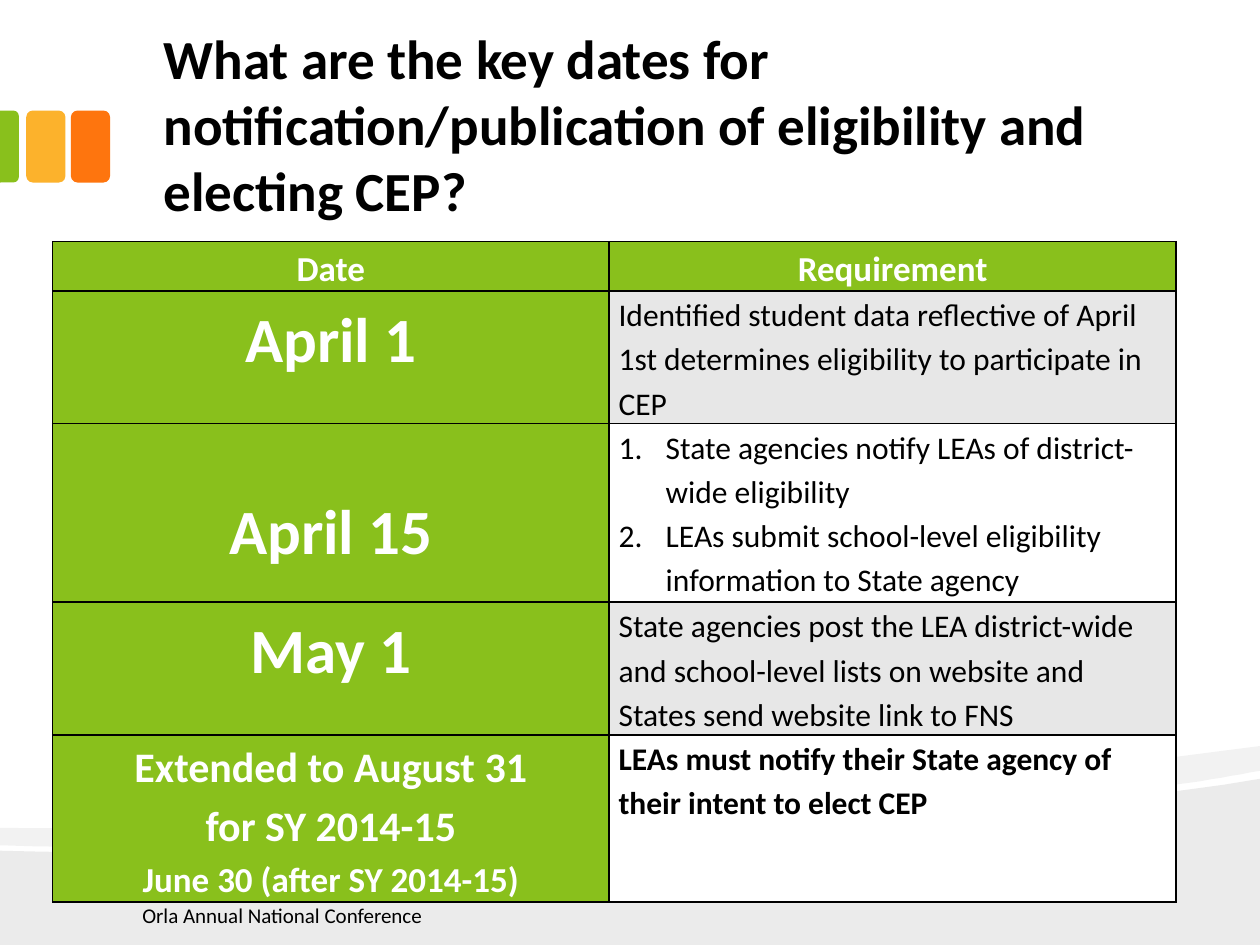
from lxml import etree
from pptx import Presentation
from pptx.dml.color import RGBColor
from pptx.enum import shapes as kinds, text as txt
from pptx.oxml import ns
from pptx.util import Cm, Pt

INK = {"black": "000000", "white": "FFFFFF", "green": "89C01C",
       "gold": "FCB22C", "orange": "FE750E", "grey": "E7E7E7"}
FONT = "Calibri"
LEFT, MID = txt.PP_ALIGN.LEFT, txt.PP_ALIGN.CENTER

# Each entry: date lines with sizes, requirement lines, requirement bold, top gap in cm
ROWS = [
    ([("April 1", 36)],
     ["Identified student data reflective of April 1st determines "
      "eligibility to participate in CEP"], False, 0),
    ([("April 15", 36)],
     ["State agencies notify LEAs of district-wide eligibility",
      "LEAs submit school-level eligibility information to State agency"],
     False, 1.2),
    ([("May 1", 36)],
     ["State agencies post the LEA district-wide and school-level lists "
      "on website and States send website link to FNS"], False, 0),
    ([("Extended to August 31", 24), ("for SY 2014-15", 24),
      ("June 30 (after SY 2014-15)", 20)],
     ["LEAs must notify their State agency of their intent to elect CEP"],
     True, 0),
]


def rgb(name):
    return RGBColor.from_string(INK[name])


def paint(shape, color):
    shape.shadow.inherit = False
    shape.fill.solid()
    shape.fill.fore_color.rgb = rgb(color)
    shape.line.fill.background()


def style(para, size, color, bold=False, align=LEFT):
    para.alignment = align
    for run in para.runs:
        font = run.font
        font.name, font.size, font.bold = FONT, Pt(size), bold
        font.color.rgb = rgb(color)


def pad(frame, anchor):
    frame.word_wrap = True
    frame.auto_size = txt.MSO_AUTO_SIZE.NONE
    frame.vertical_anchor = anchor
    frame.margin_left = frame.margin_right = Cm(0.33)
    frame.margin_top = frame.margin_bottom = Cm(0.18)


def curve(a, b, c, d, steps=24):
    """Points along a cubic curve, without its start."""
    pts = []
    for i in range(1, steps + 1):
        t = i / steps
        s = 1 - t
        pts.append(tuple(s**3 * p + 3 * s * s * t * q + 3 * s * t * t * r + t**3 * e
                         for p, q, r, e in zip(a, b, c, d)))
    return pts


def wave(slide, pts, alpha):
    """Closed outline through points in cm, black at alpha percent."""
    pts = [(x * 100, y * 100) for x, y in pts]
    pen = slide.shapes.build_freeform(*pts[0], scale=Cm(0.01))
    pen.add_line_segments(pts[1:], close=True)
    shape = pen.convert_to_shape()
    paint(shape, "black")
    tint = shape.fill._xPr.find(".//" + ns.qn("a:srgbClr"))
    etree.SubElement(tint, ns.qn("a:alpha"), val=str(alpha * 1000))


def waves(slide, wide, high):
    start, end = (0, 17.15), (wide, 15.7)
    wave(slide, [end, (wide, high), (0, high), start]
         + curve(start, (6.71, 17.35), (19.86, 16.64), end), 8)
    top, low, bend = (wide, 15.04), (wide, 15.54), (19.61, 16.28)
    wave(slide, [top, low]
         + curve(low, (23.93, 15.82), (21.89, 16.08), bend)
         + curve(bend, (13.28, 16.84), (4.9, 17.2), (0, 17.04))
         + [(0, 16.69)]
         + curve((0, 16.69), (12.42, 16.81), (18.49, 15.93), top), 5)


def tabs(slide, top, wide, high):
    for i, color in enumerate(("gold", "orange")):
        tab = slide.shapes.add_shape(
            kinds.MSO_SHAPE.ROUNDED_RECTANGLE,
            Cm(0.53 + i * 0.9), Cm(top), Cm(wide), Cm(high))
        paint(tab, color)
    thin = 0.38
    edge = slide.shapes.add_shape(
        kinds.MSO_SHAPE.ROUND_2_SAME_RECTANGLE, Cm((thin - high) / 2),
        Cm(top + (high - thin) / 2), Cm(high), Cm(thin))
    edge.rotation = 90
    edge.adjustments[0], edge.adjustments[1] = 0.29, 0
    paint(edge, "green")


def title(slide, x, y, w, h):
    head = slide.shapes.title
    head.left, head.top, head.width, head.height = map(Cm, (x, y, w, h))
    frame = head.text_frame
    frame.text = ("What are the key dates for notification/publication "
                  "of eligibility and electing CEP?")
    pad(frame, txt.MSO_ANCHOR.BOTTOM)
    style(frame.paragraphs[0], 31.5, "black", True)


def border(cell):
    props = cell._tc.get_or_add_tcPr()
    for i, side in enumerate(("lnL", "lnR", "lnT", "lnB")):
        line = etree.Element(ns.qn("a:" + side), w=str(Pt(1)))
        fill = etree.SubElement(line, ns.qn("a:solidFill"))
        etree.SubElement(fill, ns.qn("a:srgbClr"), val=INK["black"])
        props.insert(i, line)


def number(para):
    props = para._p.get_or_add_pPr()
    props.set("marL", str(Cm(0.95)))
    props.set("indent", str(-Cm(0.95)))
    etree.SubElement(props, ns.qn("a:buFont"), typeface="+mj-lt")
    etree.SubElement(props, ns.qn("a:buAutoNum"), type="arabicPeriod")


def write(cell, lines, fill, color, bold, align, gap=0):
    """Fill a cell with (text, size) lines."""
    cell.margin_left = cell.margin_right = Cm(0.19)
    cell.margin_top, cell.margin_bottom = Cm(gap), 0
    cell.fill.solid()
    cell.fill.fore_color.rgb = rgb(fill)
    border(cell)
    frame = cell.text_frame
    frame.text = "\n".join(line for line, _ in lines)
    for para, (_, size) in zip(frame.paragraphs, lines):
        para.line_spacing = 1.15
        style(para, size, color, bold, align)


def dates(slide, x, y, w, h):
    grid = slide.shapes.add_table(len(ROWS) + 1, 2, Cm(x), Cm(y), Cm(w), Cm(h)).table
    for col, wide in zip(grid.columns, (11.22, w - 11.22)):
        col.width = Cm(wide)
    for row, high in zip(grid.rows, (0.9, 2.13, 3.6, 2.4, 3)):
        row.height = Cm(high)
    for i, name in enumerate(("Date", "Requirement")):
        write(grid.cell(0, i), [(name, 20)], "green", "white", True, MID)
    for i, (when, needs, bold, gap) in enumerate(ROWS, 1):
        write(grid.cell(i, 0), when, "green", "white", True, MID, gap)
        cell = grid.cell(i, 1)
        write(cell, [(need, 18) for need in needs],
              "grey" if i % 2 else "white", "black", bold, LEFT)
        if len(needs) > 1:
            for para in cell.text_frame.paragraphs:
                number(para)


def footer(slide, x, y, w, h):
    frame = slide.shapes.add_textbox(Cm(x), Cm(y), Cm(w), Cm(h)).text_frame
    frame.text = "Orla Annual National Conference"
    pad(frame, txt.MSO_ANCHOR.MIDDLE)
    style(frame.paragraphs[0], 12, "black")


def main():
    deck = Presentation()
    wide, high = 25.4, 19.05
    deck.slide_width, deck.slide_height = Cm(wide), Cm(high)
    slide = deck.slides.add_slide(deck.slide_layouts[5])
    waves(slide, wide, high)
    tabs(slide, 2.23, 0.79, 1.45)
    title(slide, 2.97, 1.07, 21.59, 3.6)
    dates(slide, 1.06, 4.87, 22.65, 13.13)
    footer(slide, 2.54, 18.2, 17.27, 0.51)
    deck.save("out.pptx")


if __name__ == "__main__":
    main()
